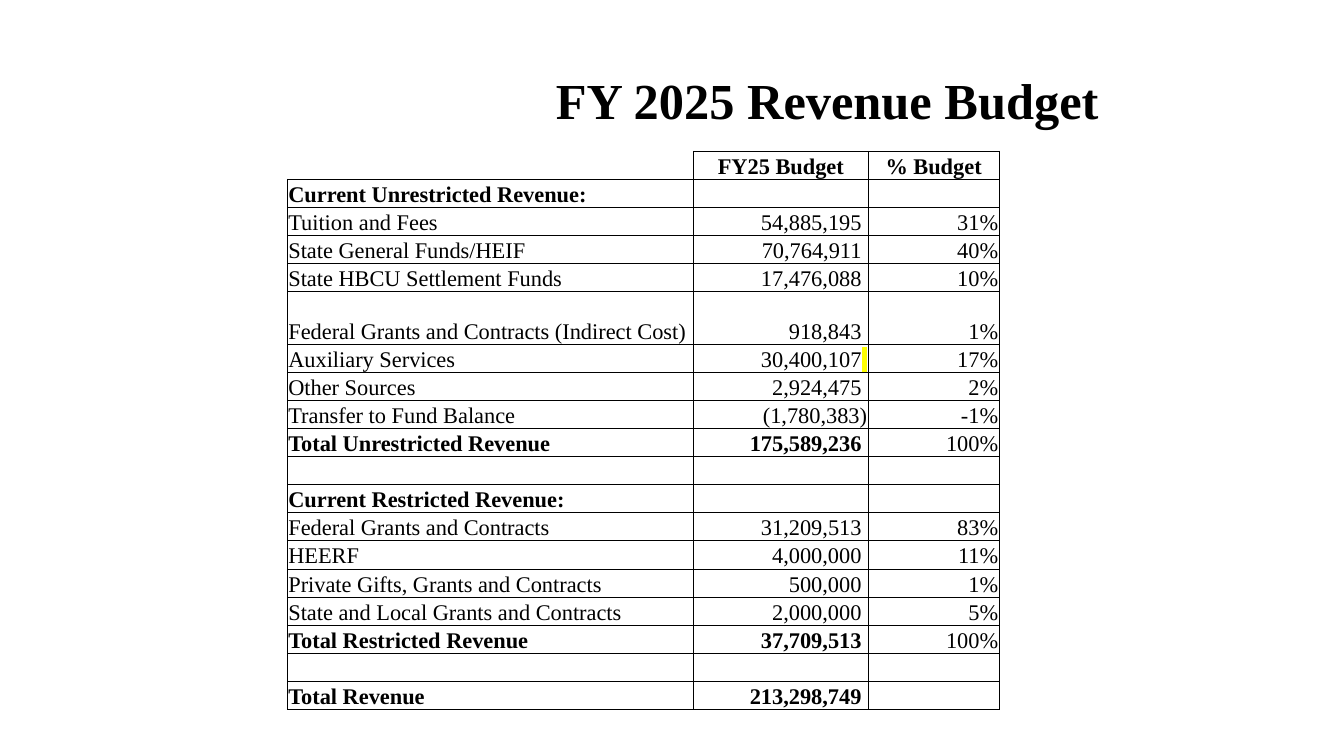
from dataclasses import dataclass

from lxml.etree import SubElement
from pptx import Presentation
from pptx.dml.color import RGBColor
from pptx.enum.text import MSO_ANCHOR, MSO_AUTO_SIZE, PP_ALIGN
from pptx.oxml import parse_xml
from pptx.oxml.ns import nsdecls, qn
from pptx.util import Inches, Pt


@dataclass(frozen=True)
class Theme:
    font: str = "Times New Roman"
    ink: str = "000000"
    mark: str = "FFFF00"
    title: int = 36
    body: int = 16
    line: float = 0.5


THEME = Theme()
WIDE, HIGH = 13.33, 7.5
COLS = (4.03, 1.73, 1.3)
TALL = 0.52
ALIGNS = (PP_ALIGN.LEFT, PP_ALIGN.RIGHT, PP_ALIGN.RIGHT)

# Label, amount, share
ROWS = [
    ("", "FY25 Budget", "% Budget"),
    ("Current Unrestricted Revenue:", "", ""),
    ("Tuition and Fees", "54,885,195", "31%"),
    ("State General Funds/HEIF", "70,764,911", "40%"),
    ("State HBCU Settlement Funds", "17,476,088", "10%"),
    ("Federal Grants and Contracts (Indirect Cost)", "918,843", "1%"),
    ("Auxiliary Services", "30,400,107", "17%"),
    ("Other Sources", "2,924,475", "2%"),
    ("Transfer to Fund Balance", "(1,780,383)", "-1%"),
    ("Total Unrestricted Revenue", "175,589,236", "100%"),
    ("", "", ""),
    ("Current Restricted Revenue:", "", ""),
    ("Federal Grants and Contracts", "31,209,513", "83%"),
    ("HEERF", "4,000,000", "11%"),
    ("Private Gifts, Grants and Contracts", "500,000", "1%"),
    ("State and Local Grants and Contracts", "2,000,000", "5%"),
    ("Total Restricted Revenue", "37,709,513", "100%"),
    ("", "", ""),
    ("Total Revenue", "213,298,749", ""),
]
TALL_ROW = "Federal Grants and Contracts (Indirect Cost)"
MARKED = "Auxiliary Services"


def add_run(para, text, size, bold, mark=None):
    run = para.add_run()
    run.text = text
    font = run.font
    font.name, font.size, font.bold = THEME.font, Pt(size), bold
    font.color.rgb = RGBColor.from_string(THEME.ink)
    if mark:
        tint = parse_xml(f'<a:highlight {nsdecls("a")}><a:srgbClr val="{mark}"/></a:highlight>')
        font.fill._xPr.find(qn("a:solidFill")).addnext(tint)


def add_edges(cell, sides):
    props = cell._tc.get_or_add_tcPr()
    for spot, side in enumerate("LRTB"):
        paint = (f'<a:solidFill><a:srgbClr val="{THEME.ink}"/></a:solidFill>'
                 if side in sides else "<a:noFill/>")
        edge = parse_xml(f'<a:ln{side} {nsdecls("a")} w="{Pt(THEME.line)}">{paint}</a:ln{side}>')
        props.insert(spot, edge)


def add_title(slide, box):
    shape = slide.shapes.add_textbox(*map(Inches, box))
    frame = shape.text_frame
    frame.word_wrap = True
    frame.auto_size = MSO_AUTO_SIZE.SHAPE_TO_FIT_TEXT
    para = frame.paragraphs[0]
    para.alignment = PP_ALIGN.CENTER
    add_run(para, "FY 2025 Revenue Budget", THEME.title, True)


def fill_cell(cell, row, col):
    cell.fill.background()
    cell.vertical_anchor = MSO_ANCHOR.BOTTOM
    cell.margin_left = cell.margin_right = cell.margin_top = Inches(0.01)
    cell.margin_bottom = 0
    add_edges(cell, "RB" if row == col == 0 else "LRTB")
    label, text = ROWS[row][0], ROWS[row][col]
    para = cell.text_frame.paragraphs[0]
    if not text:
        SubElement(para._p, qn("a:endParaRPr"), sz=str(THEME.body * 100))
        return
    para.alignment = PP_ALIGN.CENTER if row == 0 else ALIGNS[col]
    strong = label.startswith("Total") or label.endswith(":")
    add_run(para, text, THEME.body, row == 0 or (strong and col < 2))
    # Positive amounts leave room for a closing bracket
    if row and col == 1 and not text.endswith(")"):
        add_run(para, " ", THEME.body, strong, THEME.mark if label == MARKED else None)


def add_budget(slide, box):
    frame = slide.shapes.add_table(len(ROWS), len(COLS), *map(Inches, box))
    table = frame.table
    table.first_row = table.horz_banding = False
    for col, share in zip(table.columns, COLS):
        col.width = Inches(box[2] * share / sum(COLS))
    step = (box[3] - TALL) / (len(ROWS) - 1)
    for row, line in enumerate(table.rows):
        line.height = Inches(TALL if ROWS[row][0] == TALL_ROW else step)
        for col, cell in enumerate(line.cells):
            fill_cell(cell, row, col)


def main():
    deck = Presentation()
    deck.slide_width, deck.slide_height = Inches(WIDE), Inches(HIGH)
    slide = deck.slides.add_slide(deck.slide_layouts[6])
    add_title(slide, (3.08, 0.64, WIDE - 3.08, 0.71))
    add_budget(slide, (2.85, 1.5, sum(COLS), 5.54))
    deck.save("out.pptx")


if __name__ == "__main__":
    main()
